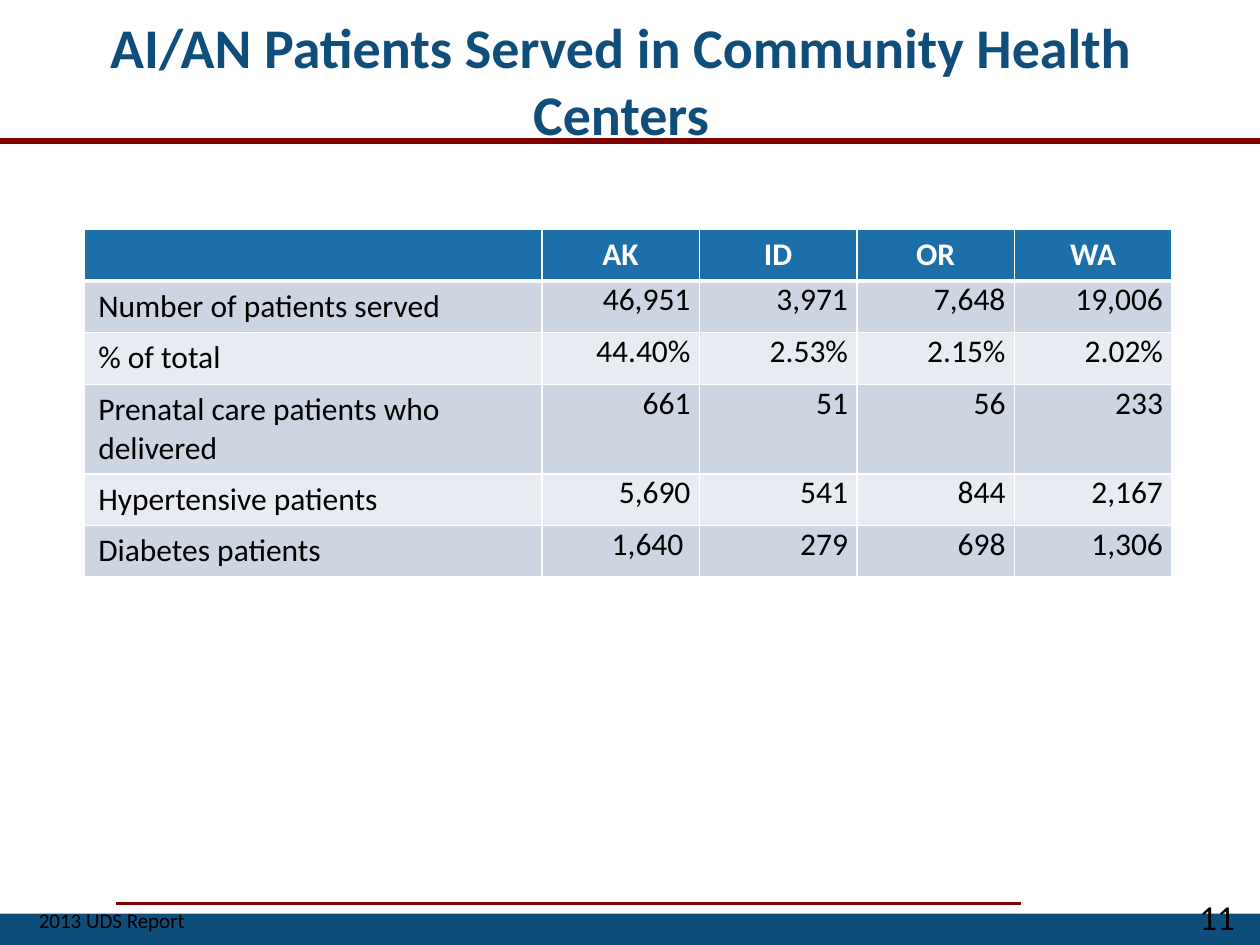
from lxml.etree import SubElement
from pptx import Presentation
from pptx.dml.color import RGBColor
from pptx.enum.shapes import MSO_CONNECTOR as Conn, MSO_SHAPE as Shape
from pptx.enum.text import MSO_ANCHOR as Anchor, PP_ALIGN as Align
from pptx.oxml import parse_xml
from pptx.oxml.ns import nsdecls, qn
from pptx.util import Inches, Pt

NAVY, BLUE, MAROON = "0F4D7B", "1D6FA9", "800000"
BLACK, WHITE = "000000", "FFFFFF"
BANDS = ["CDD5E2", "E8EBF1"]
ROWS = [
    ["", "AK", "ID", "OR", "WA"],
    ["Number of patients served", "46,951", "3,971", "7,648", "19,006"],
    ["% of total", "44.40%", "2.53%", "2.15%", "2.02%"],
    ["Prenatal care patients who delivered", "661", "51", "56", "233"],
    ["Hypertensive patients", "5,690", "541", "844", "2,167"],
    ["Diabetes patients", "1,640 ", "279", "698", "1,306"],
]


def paint(form, color):
    """Give a fill, line or font format a solid hex colour."""
    if hasattr(form, "solid"):
        form.solid()
        form.fore_color.rgb = RGBColor.from_string(color)
    else:
        form.color.rgb = RGBColor.from_string(color)


def style(frame, size, color, bold=False, align=Align.LEFT):
    """Format every run of a text frame."""
    for para in frame.paragraphs:
        para.alignment = align
        for run in para.runs:
            run.font.name = "Calibri"
            run.font.size = Pt(size)
            run.font.bold = bold
            paint(run.font, color)


def add_text(slide, box, text, size, color, bold=False,
             align=Align.LEFT, anchor=Anchor.TOP):
    """Add a wrapped text box."""
    frame = slide.shapes.add_textbox(*map(Inches, box)).text_frame
    frame.word_wrap = True
    frame.vertical_anchor = anchor
    frame.text = text
    style(frame, size, color, bold, align)


def add_rule(slide, left, right, top, width):
    """Add a horizontal maroon line."""
    ends = map(Inches, (left, top, right, top))
    rule = slide.shapes.add_connector(Conn.STRAIGHT, *ends)
    paint(rule.line, MAROON)
    rule.line.width = Pt(width)
    SubElement(rule._element.spPr, qn("a:effectLst"))


def add_bar(slide, box, color):
    """Add a plain filled rectangle."""
    bar = slide.shapes.add_shape(Shape.RECTANGLE, *map(Inches, box))
    bar.shadow.inherit = False
    paint(bar.fill, color)
    bar.line.fill.background()


def add_edges(cell, top, bottom):
    """Draw white cell borders, with top and bottom widths in points."""
    props = cell._tc.get_or_add_tcPr()
    for side, width in zip("LRTB", (1, 1, top, bottom)):
        props.append(parse_xml(
            f'<a:ln{side} {nsdecls("a")} w="{Pt(width)}"><a:solidFill>'
            f'<a:srgbClr val="{WHITE}"/></a:solidFill></a:ln{side}>'))


def fill_cell(cell, text, row, col):
    """Set the text and look of one table cell by its place."""
    head, value = row == 0, row > 0 and col > 0
    side, edge = (0.07, 0) if value else (0.11, 0.05)
    cell.margin_left = cell.margin_right = Inches(side)
    cell.margin_top = cell.margin_bottom = Inches(edge)
    add_edges(cell, 3 if row == 1 else 1, 3 if head else 1)
    paint(cell.fill, BLUE if head else BANDS[(row - 1) % 2])
    cell.text_frame.text = text
    align = Align.CENTER if head else Align.RIGHT if value else Align.LEFT
    style(cell.text_frame, 18, WHITE if head else BLACK, head, align)


def add_grid(slide, box, rows, widths, height):
    """Add the patient table."""
    size = len(rows), len(widths)
    table = slide.shapes.add_table(*size, *map(Inches, box)).table
    for col, width in zip(table.columns, widths):
        col.width = Inches(width)
    for row, texts in enumerate(rows):
        table.rows[row].height = Inches(height)
        for col, text in enumerate(texts):
            fill_cell(table.cell(row, col), text, row, col)


def main():
    """Build and save the slide."""
    deck = Presentation()
    deck.slide_width, deck.slide_height = Inches(10), Inches(7.5)
    slide = deck.slides.add_slide(deck.slide_layouts[6])
    add_rule(slide, 0.92, 8.1, 7.17, 1.5)
    add_bar(slide, (0, 7.25, 10, 0.25), NAVY)
    add_rule(slide, 0, 10, 1.12, 3)
    add_grid(slide, (0.67, 1.82, 8.63, 2.46), ROWS, [3.63] + [1.25] * 4, 0.41)
    add_text(slide, (0.21, 7.15, 5.29, 0.3), "2013 UDS Report", 12, BLACK)
    add_text(slide, (0.44, 0.17, 8.98, 0.92),
             "AI/AN Patients Served in Community Health Centers",
             32, NAVY, True, Align.CENTER, Anchor.MIDDLE)
    add_text(slide, (9.42, 7.06, 0.59, 0.44), "11", 20, BLACK)
    deck.save("out.pptx")


if __name__ == "__main__":
    main()
